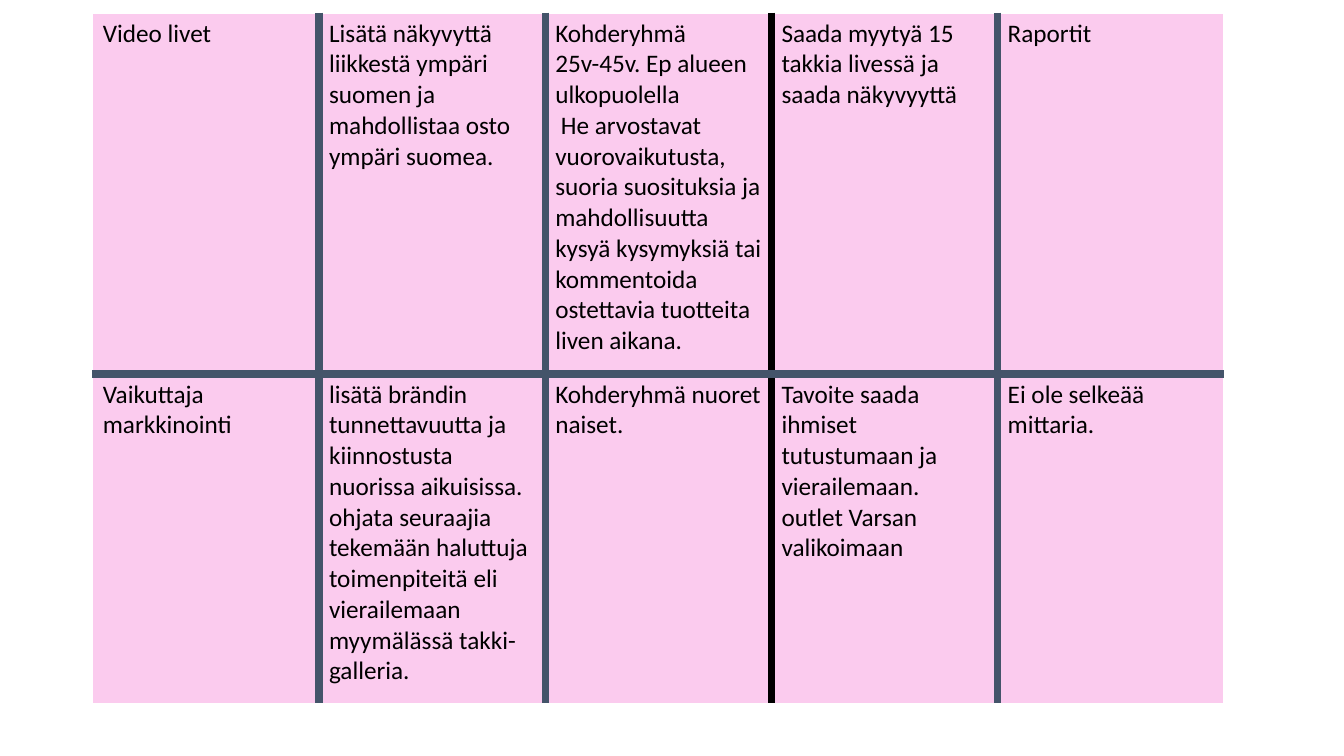
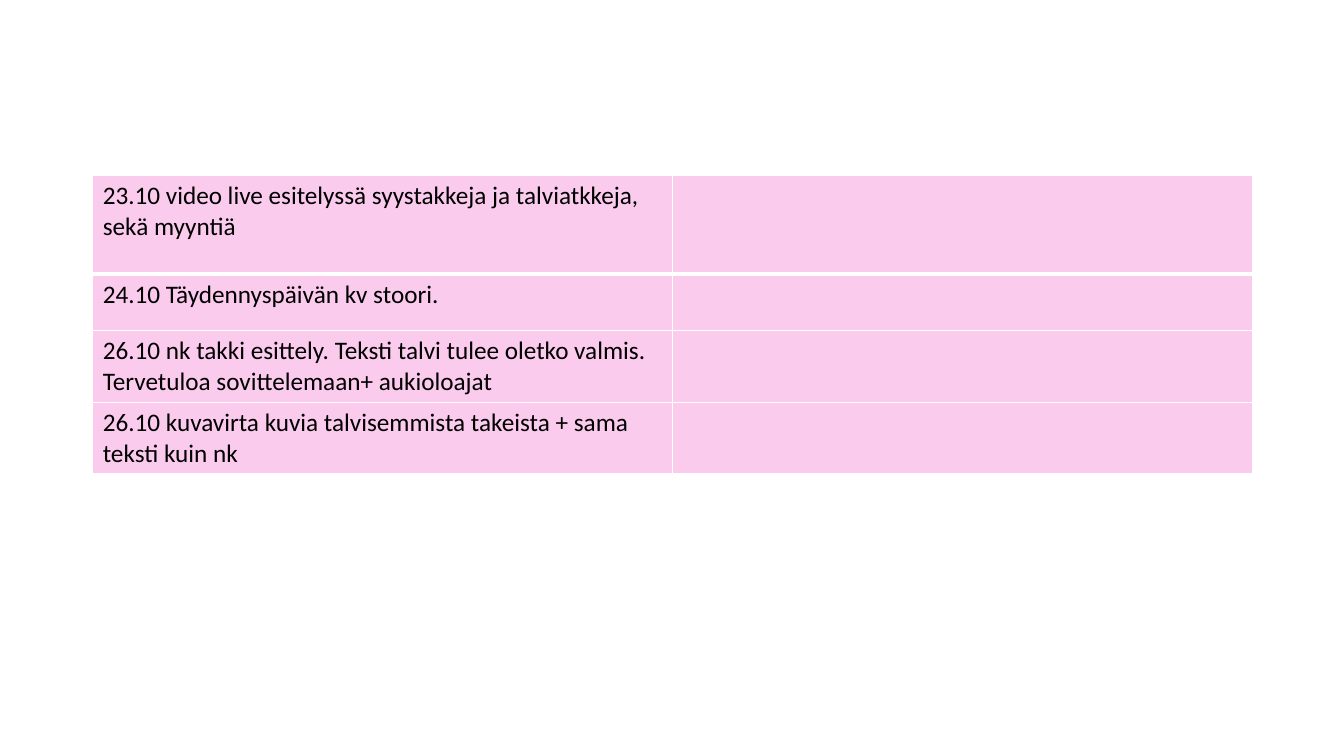
"""Build two slides of marketing plan tables with shared cell styling."""
from dataclasses import dataclass

from lxml import etree
from pptx import Presentation
from pptx.dml.color import RGBColor
from pptx.oxml import ns
from pptx.util import Inches, Pt


@dataclass(frozen=True)
class Theme:
    font: str = "Calibri"
    size: int = 18
    text: str = "000000"
    cell: str = "FBCBEE"
    white: str = "FFFFFF"
    slate: str = "44546A"
    black: str = "000000"
    thin: int = 1
    medium: int = 3
    thick: int = 6


THEME = Theme()
THIN = (THEME.white, THEME.thin)
MEDIUM = (THEME.white, THEME.medium)
SLATE = (THEME.slate, THEME.thick)
BLACK = (THEME.black, THEME.thick)
LEFT = 0.92

TABLES = [
    {
        "top": 0.13,
        "width": 11.22,
        "heights": [3.58, 3.27],
        "column_lines": [THIN, SLATE, SLATE, BLACK, SLATE, THIN],
        "row_lines": [THIN, SLATE, THIN],
        "rows": [
            [
                "Video livet",
                "Lisätä näkyvyttä liikkestä ympäri suomen ja mahdollistaa osto ympäri suomea.",
                "Kohderyhmä 25v-45v. Ep alueen ulkopuolella\n"
                " He arvostavat vuorovaikutusta, suoria suosituksia ja mahdollisuutta kysyä "
                "kysymyksiä tai kommentoida ostettavia tuotteita liven aikana.",
                "Saada myytyä 15 takkia livessä ja saada näkyvyyttä",
                "Raportit",
            ],
            [
                "Vaikuttaja markkinointi",
                "lisätä brändin tunnettavuutta ja kiinnostusta nuorissa aikuisissa. ohjata "
                "seuraajia tekemään haluttuja toimenpiteitä eli vierailemaan myymälässä "
                "takki-galleria.",
                "Kohderyhmä nuoret naiset.",
                "Tavoite saada ihmiset tutustumaan ja vierailemaan.\noutlet Varsan valikoimaan",
                "Ei ole selkeää mittaria.",
            ],
        ],
    },
    {
        "top": 1.74,
        "width": 11.5,
        "heights": [0.98, 0.56, 0.7, 0.7],
        "column_lines": [THIN] * 3,
        "row_lines": [THIN, MEDIUM, THIN, THIN, THIN],
        "rows": [
            ["23.10 video live esitelyssä syystakkeja ja talviatkkeja, sekä myyntiä", ""],
            ["24.10 Täydennyspäivän kv stoori.", ""],
            [
                "26.10 nk takki esittely. Teksti talvi tulee oletko valmis. "
                "Tervetuloa sovittelemaan+ aukioloajat",
                "",
            ],
            ["26.10 kuvavirta kuvia talvisemmista takeista + sama teksti kuin nk", ""],
        ],
    },
]


def add_border(cell, side, line):
    color, width = line
    tc_pr = cell._tc.get_or_add_tcPr()
    ln = etree.SubElement(tc_pr, ns.qn(f"a:ln{side}"), w=str(Pt(width)))
    fill = etree.SubElement(ln, ns.qn("a:solidFill"))
    etree.SubElement(fill, ns.qn("a:srgbClr"), val=color)


def style_cell(cell, content, borders):
    for side, line in borders.items():
        add_border(cell, side, line)
    cell.fill.solid()
    cell.fill.fore_color.rgb = RGBColor.from_string(THEME.cell)
    cell.text = content
    for p in cell.text_frame.paragraphs:
        p.font.name = THEME.font
        p.font.size = Pt(THEME.size)
        p.font.color.rgb = RGBColor.from_string(THEME.text)


def add_plan_table(s, plan):
    rows, across, down = plan["rows"], plan["column_lines"], plan["row_lines"]
    table = s.shapes.add_table(
        len(rows), len(rows[0]), Inches(LEFT), Inches(plan["top"]),
        Inches(plan["width"]), Inches(sum(plan["heights"])),
    ).table
    for row, height in zip(table.rows, plan["heights"]):
        row.height = Inches(height)
    for i, contents in enumerate(rows):
        for j, content in enumerate(contents):
            borders = {"L": across[j], "R": across[j + 1], "T": down[i], "B": down[i + 1]}
            style_cell(table.cell(i, j), content, borders)


def main():
    prs = Presentation()
    prs.slide_width, prs.slide_height = Inches(13.33), Inches(7.5)
    for plan in TABLES:
        add_plan_table(prs.slides.add_slide(prs.slide_layouts[6]), plan)
    prs.save("out.pptx")


if __name__ == "__main__":
    main()
